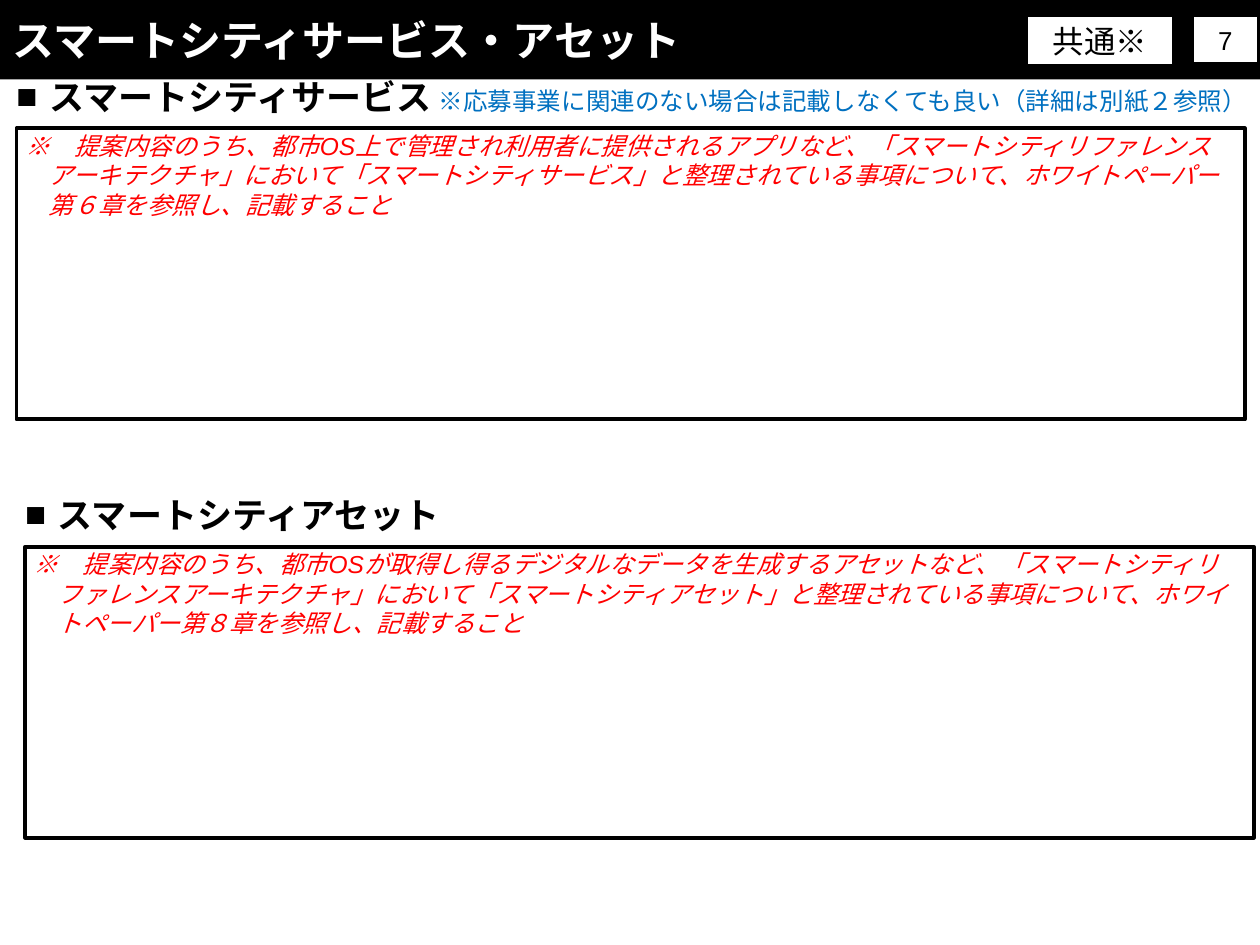
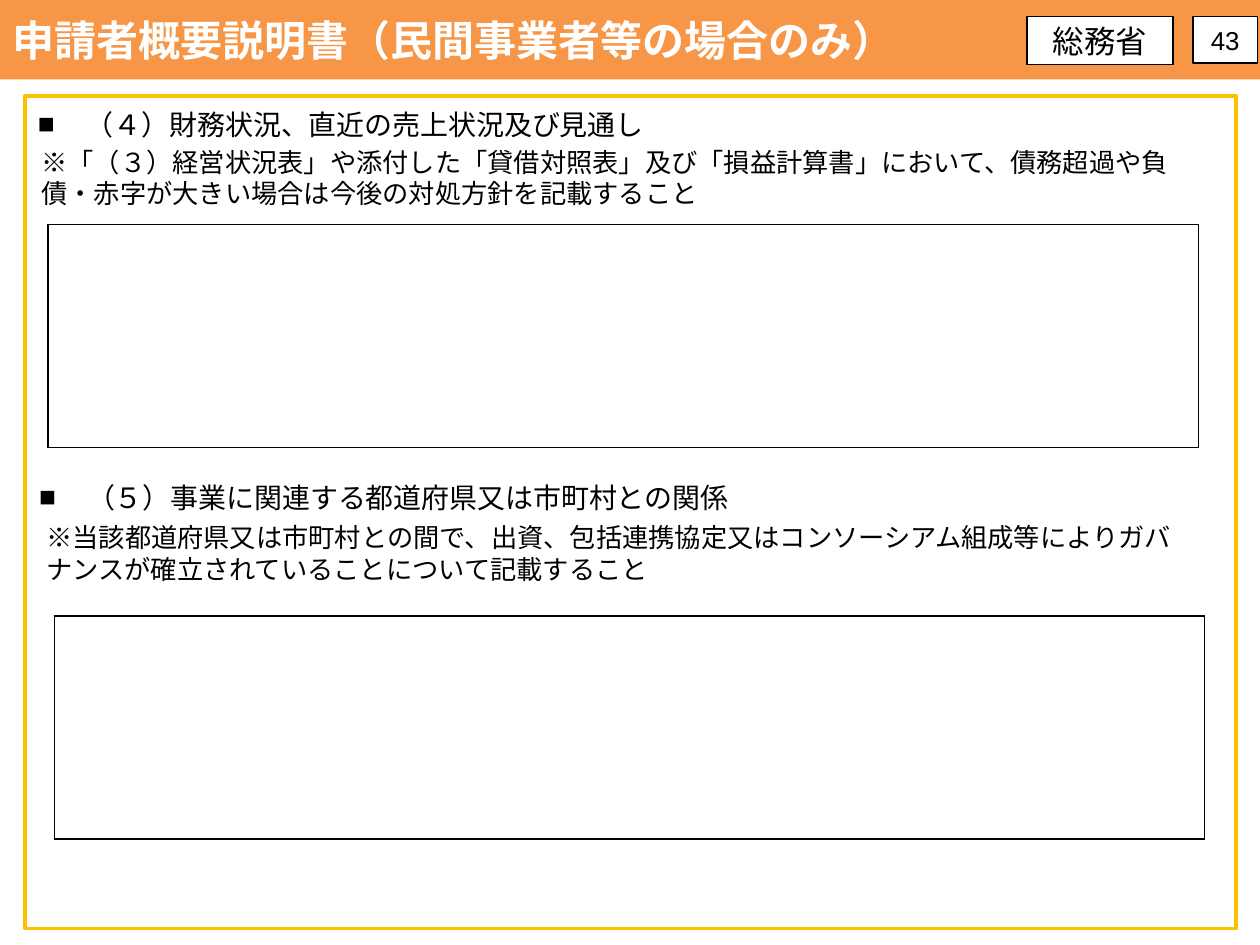
from lxml import etree
from pptx import Presentation
from pptx.dml.color import RGBColor
from pptx.enum.shapes import MSO_SHAPE
from pptx.enum.text import MSO_ANCHOR, MSO_AUTO_SIZE, PP_ALIGN
from pptx.oxml.ns import qn
from pptx.util import Pt

RECTANGLE = MSO_SHAPE.RECTANGLE
TOP, MIDDLE = MSO_ANCHOR.TOP, MSO_ANCHOR.MIDDLE
LEFT, CENTER, RIGHT = PP_ALIGN.LEFT, PP_ALIGN.CENTER, PP_ALIGN.RIGHT
NO_AUTO_SIZE = MSO_AUTO_SIZE.NONE

BLACK = RGBColor(0x00, 0x00, 0x00)
WHITE = RGBColor(0xFF, 0xFF, 0xFF)
RED = RGBColor(0xFF, 0x00, 0x00)
BLUE = RGBColor(0x00, 0x70, 0xC0)
ORANGE = RGBColor(0xF7, 0x96, 0x46)
AMBER = RGBColor(0xFF, 0xC0, 0x00)

TITLE_FONT, HEADING_FONT, BODY_FONT = "Noto Sans CJK JP", "Lato", "Arial"
TWO_CONTENT_LAYOUT = 3

BAND = (0, 0, 720, 45.4)
LABEL = (586.8, 9.4, 83.5, 27.4)
PAGE_NUMBER = (681.8, 9.4, 36.7, 26.6)

TITLE_STYLE = {"name": TITLE_FONT, "size": Pt(24), "bold": True, "color": WHITE}
LABEL_STYLE = {"name": BODY_FONT, "size": Pt(18), "color": BLACK}
NUMBER_STYLE = {"name": BODY_FONT, "size": Pt(14.8), "color": BLACK}
SECTION_STYLE = {"name": HEADING_FONT, "size": Pt(20), "bold": True, "color": BLACK}
ITEM_STYLE = {"name": HEADING_FONT, "size": Pt(16), "bold": False, "color": BLACK}
GUIDE_STYLE = {"name": BODY_FONT, "size": Pt(14), "italic": True, "color": RED}
REMARK_STYLE = {"name": BODY_FONT, "size": Pt(14), "color": BLUE}
NOTE_STYLE = {"name": BODY_FONT, "size": Pt(15), "color": BLACK}

SERVICE_TITLE = "スマートシティサービス・アセット"
SERVICE_REMARK = "※応募事業に関連のない場合は記載しなくても良い（詳細は別紙２参照）"
SERVICE_SECTIONS = [
    ("スマートシティサービス",
     "※　提案内容のうち、都市OS上で管理され利用者に提供されるアプリなど、「スマートシティリファレンスアーキテクチャ」において「スマートシティサービス」と整理されている事項について、ホワイトペーパー第６章を参照し、記載すること"),
    ("スマートシティアセット",
     "※　提案内容のうち、都市OSが取得し得るデジタルなデータを生成するアセットなど、「スマートシティリファレンスアーキテクチャ」において「スマートシティアセット」と整理されている事項について、ホワイトペーパー第８章を参照し、記載すること"),
]
SECTION_STEP = (5, 239)

APPLICANT_TITLE = "申請者概要説明書（民間事業者等の場合のみ）"
APPLICANT_ITEMS = [
    {"heading": "（４）財務状況、直近の売上状況及び見通し",
     "heading_box": (14.4, 57.6, 582.5, 26.6),
     "note": "※「（３）経営状況表」や添付した「貸借対照表」及び「損益計算書」において、債務超過や負債・赤字が大きい場合は今後の対処方針を記載すること",
     "note_box": (16.6, 79.9, 677.5, 43.9),
     "answer_box": (27.4, 128.2, 657.4, 127.4)},
    {"heading": "（５）事業に関連する都道府県又は市町村との関係",
     "heading_box": (15.1, 270.7, 457.9, 26.6),
     "note": "※当該都道府県又は市町村との間で、出資、包括連携協定又はコンソーシアム組成等によりガバナンスが確立されていることについて記載すること",
     "note_box": (19.4, 294.5, 665.3, 43.9),
     "answer_box": (31, 352.1, 657.4, 127.4)},
]


def place(shape, box):
    for name, value in zip(("left", "top", "width", "height"), box):
        setattr(shape, name, Pt(value))


def write(shape, text, style, alignment=LEFT, anchor=TOP, hanging=0):
    frame = shape.text_frame
    frame_format = {"word_wrap": True, "auto_size": NO_AUTO_SIZE, "vertical_anchor": anchor}
    for name, value in frame_format.items():
        setattr(frame, name, value)
    paragraph = frame.paragraphs[0]
    paragraph.alignment = alignment
    paragraph.space_before = Pt(0)
    properties = paragraph._p.get_or_add_pPr()
    properties.set("marL", str(Pt(hanging)))
    properties.set("indent", str(Pt(-hanging)))
    run = paragraph.add_run()
    run.text = text
    for name, value in style.items():
        if name == "color":
            run.font.color.rgb = value
        else:
            setattr(run.font, name, value)
    east_asian_font = TITLE_FONT if style["name"] == TITLE_FONT else HEADING_FONT
    run_properties = run._r.get_or_add_rPr()
    run_properties.set("lang", "ja-JP")
    etree.SubElement(run_properties, qn("a:ea")).set("typeface", east_asian_font)
    return paragraph


def write_heading(placeholder, box, text, style, hanging):
    place(placeholder, box)
    paragraph = write(placeholder, text, style, hanging=hanging)
    paragraph.space_before = Pt(style["size"].pt * 0.05)
    properties = paragraph._p.get_or_add_pPr()
    etree.SubElement(properties, qn("a:buFont")).set("typeface", BODY_FONT)
    etree.SubElement(properties, qn("a:buChar")).set("char", "■")


def add_text(slide, box, text, style, **layout):
    write(slide.shapes.add_textbox(*map(Pt, box)), text, style, **layout)


def add_rectangle(slide, box, line_color, line_width, fill_color=None):
    shape = slide.shapes.add_shape(RECTANGLE, *map(Pt, box))
    shape.shadow.inherit = False
    shape.line.color.rgb = line_color
    shape.line.width = Pt(line_width)
    if fill_color is None:
        shape.fill.background()
    else:
        shape.fill.solid()
        shape.fill.fore_color.rgb = fill_color
    return shape


def add_answer_table(slide, box):
    table = slide.shapes.add_table(1, 1, *map(Pt, box)).table
    table.first_row = table.horz_banding = False
    cell = table.cell(0, 0)
    properties = cell._tc.get_or_add_tcPr()
    for side in ("lnL", "lnR", "lnT", "lnB"):
        border = etree.SubElement(properties, qn(f"a:{side}"), w=str(Pt(1)))
        fill = etree.SubElement(border, qn("a:solidFill"))
        etree.SubElement(fill, qn("a:srgbClr")).set("val", str(BLACK))
    cell.fill.background()


def add_banded_slide(presentation, title, band_color, label, number):
    slide = presentation.slides.add_slide(presentation.slide_layouts[TWO_CONTENT_LAYOUT])
    band = slide.shapes.title
    place(band, BAND)
    band.fill.solid()
    band.fill.fore_color.rgb = band_color
    write(band, title, TITLE_STYLE, anchor=MIDDLE)
    for box, text, style, line_width in ((LABEL, label, LABEL_STYLE, 1),
                                         (PAGE_NUMBER, number, NUMBER_STYLE, 0.75)):
        tag = add_rectangle(slide, box, BLACK, line_width, WHITE)
        write(tag, text, style, alignment=CENTER, anchor=MIDDLE)
    return slide


def build_service_slide(presentation):
    slide = add_banded_slide(presentation, SERVICE_TITLE, BLACK, "共通※", "7")
    for index, (heading, guide) in enumerate(SERVICE_SECTIONS):
        shift_x, shift_y = (index * step for step in SECTION_STEP)
        add_rectangle(slide, (9.4 + shift_x, 73.4 + shift_y, 702, 166.3), BLACK, 2.25)
        write_heading(slide.placeholders[index + 1],
                      (2.2 + shift_x, 39.6 + shift_y, 337.7, 31.7),
                      heading, SECTION_STYLE, 18.7)
        add_text(slide, (7.2 + shift_x, 71.3 + shift_y, 699.8, 58.3),
                 guide, GUIDE_STYLE, hanging=13.7)
    add_text(slide, (235.4, 45.4, 484.6, 24.5), SERVICE_REMARK, REMARK_STYLE, alignment=RIGHT)


def build_applicant_slide(presentation):
    slide = add_banded_slide(presentation, APPLICANT_TITLE, ORANGE, "総務省", "43")
    add_rectangle(slide, (14.4, 54.7, 691.9, 475.9), AMBER, 2.25)
    for index, item in enumerate(APPLICANT_ITEMS):
        write_heading(slide.placeholders[index + 1], item["heading_box"],
                      item["heading"], ITEM_STYLE, 27.4)
        add_answer_table(slide, item["answer_box"])
        add_text(slide, item["note_box"], item["note"], NOTE_STYLE)


def main():
    presentation = Presentation()
    presentation.slide_width, presentation.slide_height = Pt(720), Pt(540)
    build_service_slide(presentation)
    build_applicant_slide(presentation)
    presentation.save("out.pptx")


if __name__ == "__main__":
    main()
